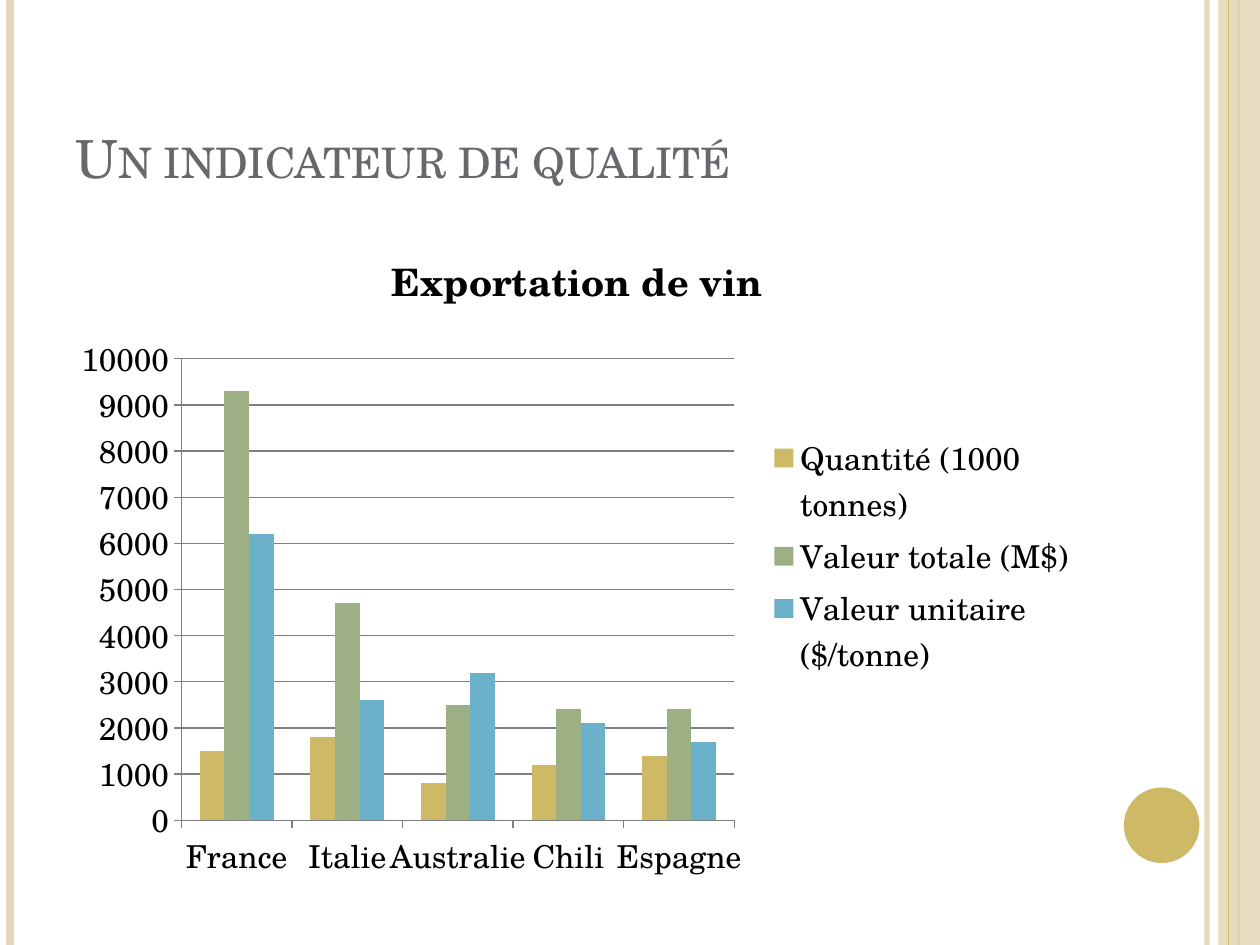
from dataclasses import dataclass

from lxml.etree import SubElement
from pptx import Presentation
from pptx.chart.data import CategoryChartData
from pptx.dml.color import RGBColor
from pptx.enum.chart import XL_CHART_TYPE as ChartType
from pptx.enum.chart import XL_LEGEND_POSITION as LegendPosition
from pptx.enum.chart import XL_TICK_MARK as TickMark
from pptx.enum.shapes import MSO_CONNECTOR as Connector
from pptx.enum.shapes import MSO_SHAPE as Shape
from pptx.enum.text import MSO_ANCHOR as Anchor
from pptx.oxml.ns import qn
from pptx.util import Inches, Pt


@dataclass(frozen=True)
class Theme:
    font: str = "TeX Gyre Schola"
    gold: str = "CEB966"
    sand: str = "E3D9B8"
    green: str = "9CB084"
    blue: str = "6BB1C9"
    title: str = "69676D"
    text: str = "000000"
    axis: str = "808080"
    title_size: float = 30
    chart_title_size: float = 21.6
    chart_size: float = 18


THEME = Theme()
COUNTRIES = ["France", "Italie", "Australie", "Chili", "Espagne"]
SERIES = [
    ("Quantité (1000 tonnes)", THEME.gold, [1500, 1800, 800, 1200, 1400]),
    ("Valeur totale (M$)", THEME.green, [9300, 4700, 2500, 2400, 2400]),
    ("Valeur unitaire ($/tonne)", THEME.blue, [6200, 2600, 3200, 2100, 1700]),
]


def color(value):
    return RGBColor.from_string(value)


def set_font(font, size, fill, bold=False):
    font.name = THEME.font
    font.size = Pt(size)
    font.bold = bold
    font.color.rgb = color(fill)


def write_text(frame, text, *, size, fill, bold=False, small_caps=False):
    run = frame.paragraphs[0].add_run()
    run.text = text
    set_font(run.font, size, fill, bold)
    if small_caps:
        run.font._element.set("cap", "small")


def set_opacity(shape, percent):
    for node in shape.element.spPr.iter(qn("a:srgbClr")):
        SubElement(node, qn("a:alpha"), val=str(percent * 1000))


def add_rule(slide, x, top, height, fill, width, opacity=100):
    rule = slide.shapes.add_connector(
        Connector.STRAIGHT, Inches(x), Inches(top), Inches(x), Inches(top + height))
    rule.line.color.rgb = color(fill)
    rule.line.width = Pt(width)
    SubElement(rule.element.spPr, qn("a:effectLst"))
    if opacity < 100:
        set_opacity(rule, opacity)


def add_solid(slide, kind, left, top, width, height, fill, opacity=100):
    shape = slide.shapes.add_shape(
        kind, Inches(left), Inches(top), Inches(width), Inches(height))
    shape.shadow.inherit = False
    shape.fill.solid()
    shape.fill.fore_color.rgb = color(fill)
    shape.line.fill.background()
    if opacity < 100:
        set_opacity(shape, opacity)


def add_frame(slide, left, top, width, height):
    """Side rules, right band and disc around the page box."""
    right = left + width
    add_rule(slide, right - 0.42, top, height, THEME.sand, 3, opacity=93)
    add_rule(slide, left + 0.08, top, height, THEME.sand, 4.5)
    add_rule(slide, right - 0.17, top, height, THEME.gold, 1.5)
    add_solid(slide, Shape.RECTANGLE, right - 0.33, top, 0.33, height,
              THEME.sand, opacity=87)
    add_rule(slide, right - 0.25, top, height, THEME.gold, 0.75)
    add_solid(slide, Shape.OVAL, right - 1.08, top + height - 1.25, 0.6, 0.6,
              THEME.gold)


def add_title(slide, text, left, top, width, height):
    box = slide.shapes.add_textbox(
        Inches(left), Inches(top), Inches(width), Inches(height))
    frame = box.text_frame
    frame.word_wrap = True
    frame.vertical_anchor = Anchor.BOTTOM
    write_text(frame, text, size=THEME.title_size, fill=THEME.title,
               small_caps=True)


def add_export_chart(slide, left, top, width, height):
    data = CategoryChartData()
    data.categories = COUNTRIES
    for name, _, values in SERIES:
        data.add_series(name, values)
    chart = slide.shapes.add_chart(
        ChartType.COLUMN_CLUSTERED, Inches(left), Inches(top),
        Inches(width), Inches(height), data).chart
    set_font(chart.font, THEME.chart_size, THEME.text)

    # Title and legend
    chart.has_title = True
    write_text(chart.chart_title.text_frame, "Exportation de vin",
               size=THEME.chart_title_size, fill=THEME.text, bold=True)
    chart.chart_title.include_in_layout = False
    chart.has_legend = True
    chart.legend.position = LegendPosition.RIGHT
    chart.legend.include_in_layout = False

    # Columns
    plot = chart.plots[0]
    plot.vary_by_categories = False
    plot.gap_width = 150
    for series, (_, fill, _) in zip(plot.series, SERIES):
        series.format.fill.solid()
        series.format.fill.fore_color.rgb = color(fill)

    # Axes and gridlines
    values = chart.value_axis
    values.minimum_scale, values.maximum_scale = 0, 10000
    values.major_unit = 1000
    values.has_major_gridlines = True
    for axis in (chart.category_axis, values):
        axis.major_tick_mark = TickMark.OUTSIDE
    for part in (chart.category_axis, values, values.major_gridlines):
        part.format.line.color.rgb = color(THEME.axis)
        part.format.line.width = Pt(0.75)


def main():
    presentation = Presentation()
    presentation.slide_width = Inches(10)
    presentation.slide_height = Inches(7.5)
    slide = presentation.slides.add_slide(presentation.slide_layouts[6])
    add_frame(slide, 0, 0, 10, 7.5)
    add_title(slide, "Un indicateur de qualité", 0.5, 0.3, 8.17, 1.25)
    add_export_chart(slide, 0.5, 1.75, 8.17, 5.33)
    presentation.save("out.pptx")


if __name__ == "__main__":
    main()
